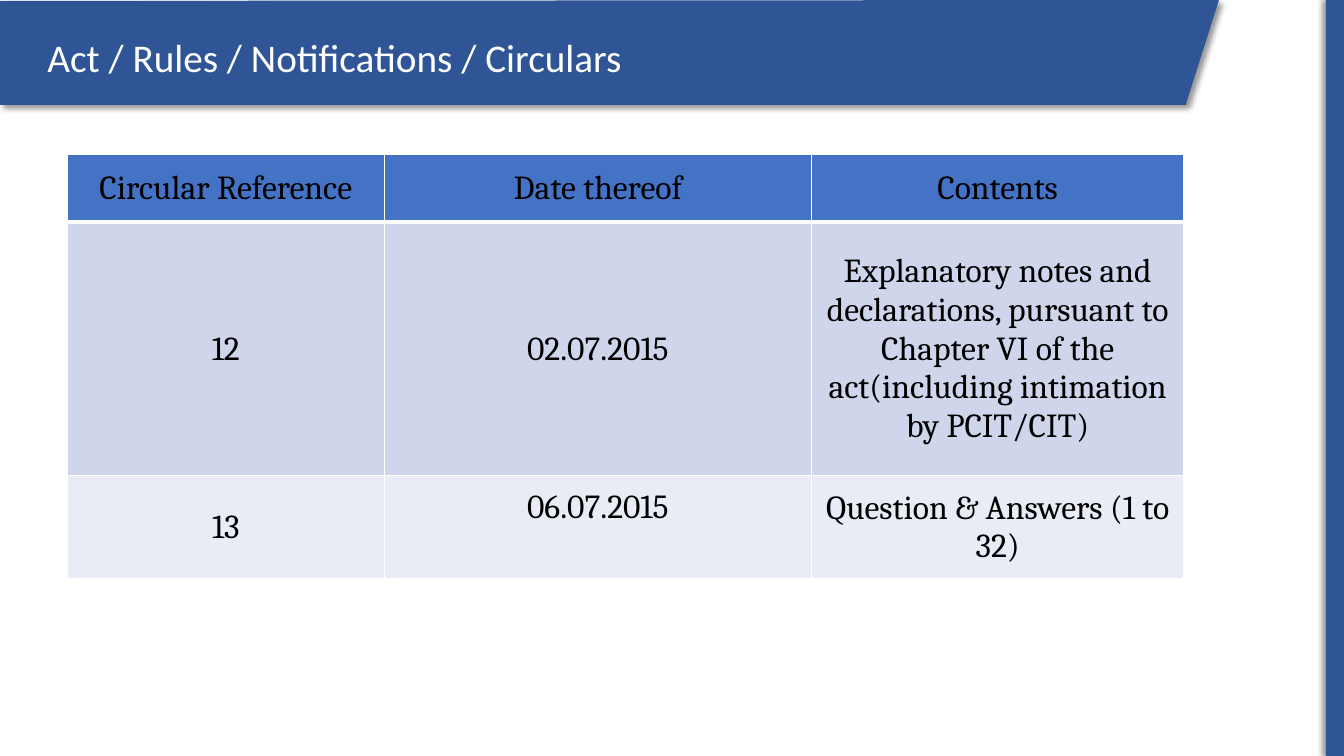
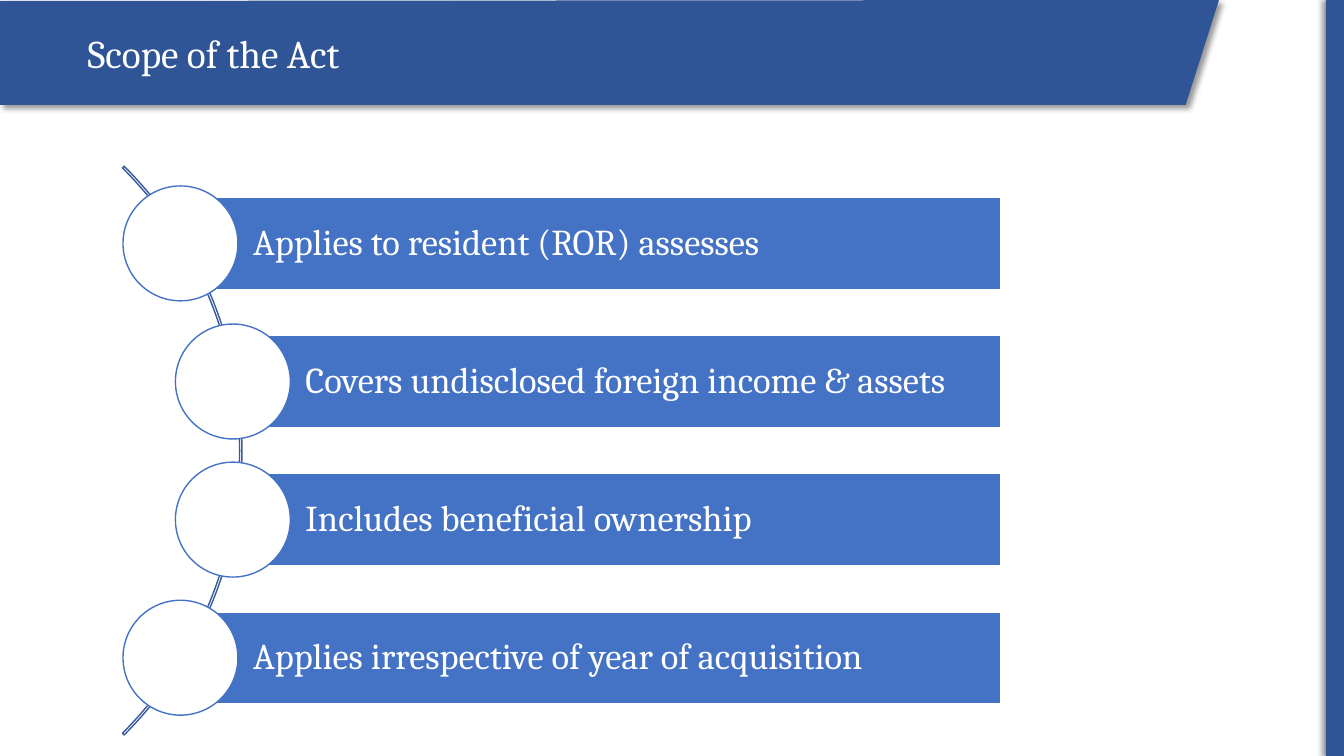
from dataclasses import dataclass

from lxml.etree import SubElement
from pptx import Presentation
from pptx.dml.color import RGBColor
from pptx.enum.shapes import MSO_SHAPE
from pptx.enum.text import MSO_ANCHOR, MSO_AUTO_SIZE, PP_ALIGN
from pptx.oxml.ns import qn
from pptx.util import Inches, Pt


@dataclass(frozen=True)
class Theme:
    band: str = "2F5597"
    accent: str = "4472C4"
    arc: str = "365B9D"
    white: str = "FFFFFF"
    black: str = "000000"
    stripes: tuple = ("CFD5EA", "E9EBF5")
    sans: str = "Calibri"
    serif: str = "Cambria"
    title_size: int = 28
    table_size: int = 24
    list_size: int = 26


THEME = Theme()
SLIDE_WIDTH, SLIDE_HEIGHT = 13.33, 7.5
BAND_POINTS = [(0, 0.01), (12.09, 0), (11.76, 1.04), (0, 1.04)]
SIDEBAR_LEFT = 13.15

CIRCULARS_TITLE = "Act / Rules / Notifications / Circulars"
CIRCULARS = [
    ("Circular Reference", "Date thereof", "Contents"),
    ("12", "02.07.2015",
     "Explanatory notes and declarations, pursuant to Chapter VI of the "
     "act(including intimation by PCIT/CIT)"),
    ("13", "06.07.2015", "Question & Answers (1 to 32)"),
]
COLUMN_WIDTHS = [3.14, 4.24, 3.69]
ROW_HEIGHTS = [0.67, 2.52, 1.02]

SCOPE_TITLE = "Scope of the Act"
SCOPE_ITEMS = [
    ("Applies to resident (ROR) assesses", 1.79),
    ("Covers undisclosed foreign income & assets", 2.31),
    ("Includes beneficial ownership", 2.31),
    ("Applies irrespective of year of acquisition", 1.79),
]
BAR_TOP, BAR_PITCH, BAR_HEIGHT, BAR_RIGHT = 1.96, 1.37, 0.91, 9.93
CIRCLE_SIZE = 1.14


def color(value):
    return RGBColor.from_string(value)


def write(frame, text, font=THEME.serif, size=THEME.list_size,
          ink=THEME.white, align=PP_ALIGN.LEFT, spacing=None):
    para = frame.paragraphs[0]
    para.alignment = align
    para.line_spacing = spacing
    span = para.add_run()
    span.text = text
    span.font.name = font
    span.font.size = Pt(size)
    span.font.bold = False
    span.font.color.rgb = color(ink)


def paint(shape, fill=None, line=None):
    shape.shadow.inherit = False
    if fill:
        shape.fill.solid()
        shape.fill.fore_color.rgb = color(fill)
    else:
        shape.fill.background()
    if line:
        shape.line.color.rgb = color(line)
        shape.line.width = Pt(1)
    else:
        shape.line.fill.background()


def add_box(slide, kind, left, top, width, height, fill=None, line=None):
    box = slide.shapes.add_shape(
        kind, Inches(left), Inches(top), Inches(width), Inches(height))
    paint(box, fill, line)
    return box


def add_shadow(shape, degrees):
    effects = shape._element.spPr.find(qn("a:effectLst"))
    shadow = SubElement(effects, qn("a:outerShdw"), blurRad=str(Pt(4)),
                        dist=str(Pt(3)), dir=str(degrees * 60000),
                        algn="ctr", rotWithShape="0")
    ink = SubElement(shadow, qn("a:srgbClr"), val=THEME.black)
    SubElement(ink, qn("a:alpha"), val="40000")


def decorate_layout(layout, slide):
    sidebar = add_box(slide, MSO_SHAPE.RECTANGLE, SIDEBAR_LEFT, 0,
                      SLIDE_WIDTH - SIDEBAR_LEFT, SLIDE_HEIGHT, THEME.band)
    points = [(Inches(x), Inches(y)) for x, y in BAND_POINTS]
    builder = slide.shapes.build_freeform(*points[0])
    builder.add_line_segments(points[1:], close=True)
    band = builder.convert_to_shape()
    paint(band, THEME.band)
    for number, (shape, degrees) in enumerate([(sidebar, 180), (band, 45)], 101):
        add_shadow(shape, degrees)
        shape._element.nvSpPr.cNvPr.set("id", str(number))
        layout.shapes._spTree.append(shape._element)


def set_title(slide, text, left, top, font):
    title = slide.shapes.title
    title.left, title.top = Inches(left), Inches(top)
    title.width, title.height = Inches(9.63), Inches(0.57)
    frame = title.text_frame
    frame.auto_size = MSO_AUTO_SIZE.NONE
    frame.vertical_anchor = MSO_ANCHOR.MIDDLE
    write(frame, text, font=font, size=THEME.title_size)


def set_borders(cell, bottom):
    properties = cell._tc.get_or_add_tcPr()
    widths = [("lnL", 1), ("lnR", 1), ("lnT", 1), ("lnB", bottom)]
    for index, (side, width) in enumerate(widths):
        border = SubElement(properties, qn(f"a:{side}"), w=str(Pt(width)))
        fill = SubElement(border, qn("a:solidFill"))
        SubElement(fill, qn("a:srgbClr"), val=THEME.white)
        properties.insert(index, border)


def build_circulars(slide):
    set_title(slide, CIRCULARS_TITLE, 0.37, 0.28, THEME.sans)
    table = slide.shapes.add_table(
        len(CIRCULARS), len(COLUMN_WIDTHS), Inches(0.67), Inches(1.53),
        Inches(sum(COLUMN_WIDTHS)), Inches(sum(ROW_HEIGHTS))).table
    for column, width in zip(table.columns, COLUMN_WIDTHS):
        column.width = Inches(width)
    fills = (THEME.accent, *THEME.stripes)
    for row_index, texts in enumerate(CIRCULARS):
        table.rows[row_index].height = Inches(ROW_HEIGHTS[row_index])
        for column_index, text in enumerate(texts):
            cell = table.cell(row_index, column_index)
            cell.margin_left = cell.margin_right = cell.margin_top = Inches(0.01)
            cell.margin_bottom = 0
            cell.vertical_anchor = MSO_ANCHOR.MIDDLE
            cell.fill.solid()
            cell.fill.fore_color.rgb = color(fills[row_index])
            set_borders(cell, 3 if row_index == 0 else 1)
            write(cell.text_frame, text, size=THEME.table_size,
                  ink=THEME.black, align=PP_ALIGN.CENTER)
    last_date = table.cell(2, 1)
    last_date.vertical_anchor = MSO_ANCHOR.TOP
    last_date.margin_top = Inches(0.12)


def build_scope(slide):
    set_title(slide, SCOPE_TITLE, 0.77, 0.24, THEME.serif)
    arc = add_box(slide, MSO_SHAPE.BLOCK_ARC, -5.58, 0.48, 7.98, 7.98,
                  line=THEME.arc)
    for index, value in enumerate((189, 27, 0.003)):
        arc.adjustments[index] = value
    for index, (text, left) in enumerate(SCOPE_ITEMS):
        top = BAR_TOP + index * BAR_PITCH
        bar = add_box(slide, MSO_SHAPE.RECTANGLE, left, top, BAR_RIGHT - left,
                      BAR_HEIGHT, THEME.accent, THEME.white)
        frame = bar.text_frame
        frame.word_wrap = True
        frame.vertical_anchor = MSO_ANCHOR.MIDDLE
        frame.margin_left = Inches(0.72)
        frame.margin_right = frame.margin_top = frame.margin_bottom = Inches(0.07)
        write(frame, text, spacing=0.9)
        add_box(slide, MSO_SHAPE.OVAL, left - CIRCLE_SIZE / 2,
                top + (BAR_HEIGHT - CIRCLE_SIZE) / 2, CIRCLE_SIZE, CIRCLE_SIZE,
                THEME.white, THEME.accent)


def main():
    deck = Presentation()
    deck.slide_width, deck.slide_height = Inches(SLIDE_WIDTH), Inches(SLIDE_HEIGHT)
    layout = deck.slide_layouts[5]
    pages = [deck.slides.add_slide(layout) for _ in range(2)]
    decorate_layout(layout, pages[0])
    for page, build in zip(pages, (build_circulars, build_scope)):
        build(page)
    deck.save("out.pptx")


if __name__ == "__main__":
    main()
